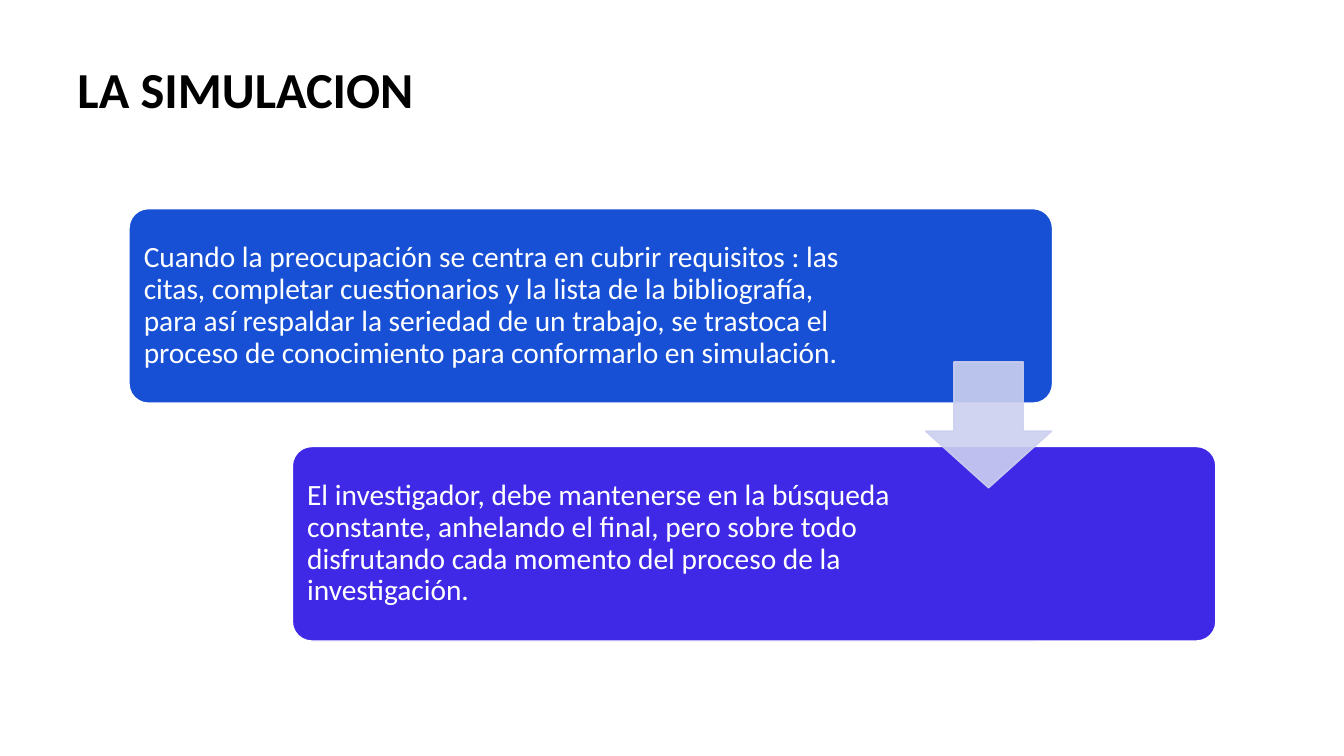
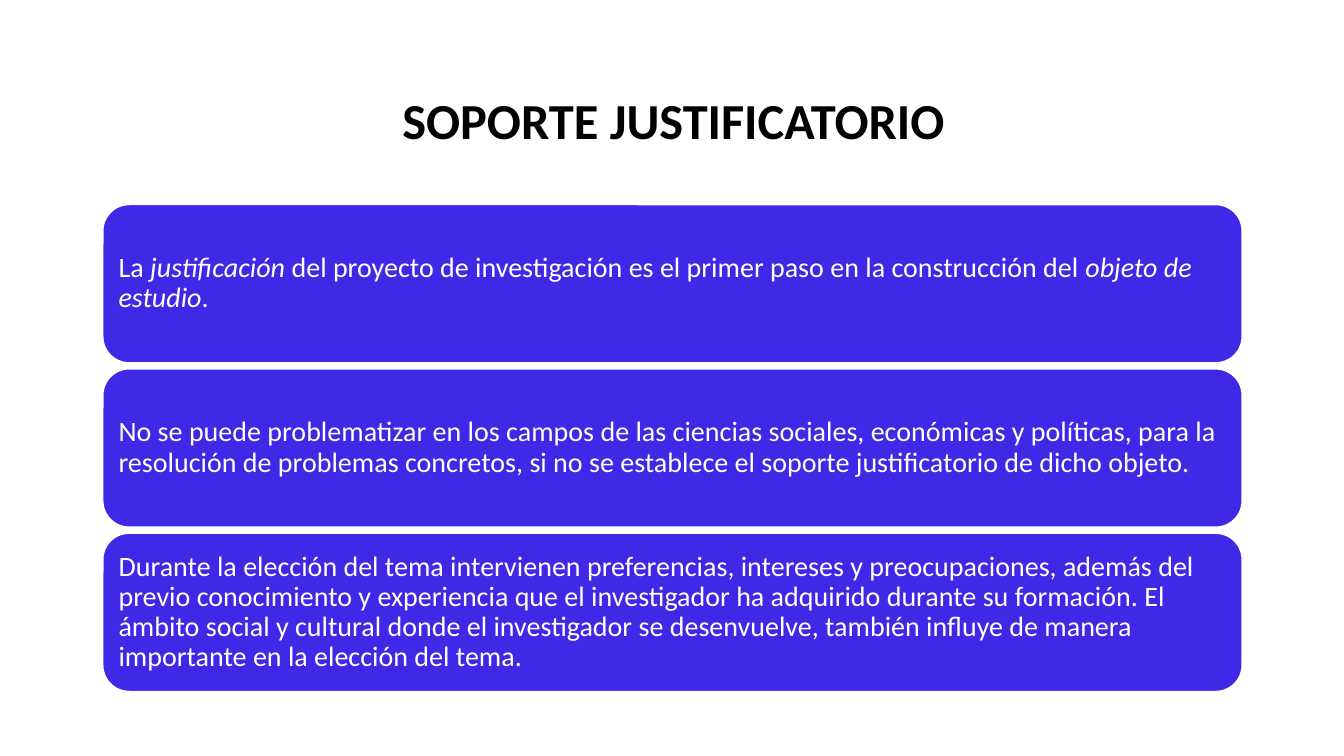
from dataclasses import dataclass

from lxml.etree import SubElement
from pptx import Presentation
from pptx.dml.color import RGBColor
from pptx.enum.shapes import MSO_SHAPE
from pptx.enum.text import MSO_ANCHOR, PP_ALIGN
from pptx.oxml.ns import qn
from pptx.util import Inches, Pt


@dataclass(frozen=True)
class Theme:
    font: str = "Calibri"
    black: RGBColor = RGBColor.from_string("000000")
    white: RGBColor = RGBColor.from_string("FFFFFF")
    blue: RGBColor = RGBColor.from_string("1750D5")
    violet: RGBColor = RGBColor.from_string("3F29E7")
    lavender: RGBColor = RGBColor.from_string("CCD0EF")
    title_size: int = 36
    step_size: int = 21
    card_size: int = 20
    line_spacing: float = 0.9


theme = Theme()


def write(frame, spans, size, color, anchor, align=PP_ALIGN.LEFT, bold=False):
    frame.word_wrap = True
    frame.vertical_anchor = anchor
    para = frame.paragraphs[0]
    para.alignment = align
    para.line_spacing = theme.line_spacing
    for text, italic in spans:
        span = para.add_run()
        span.text = text
        span.font.name = theme.font
        span.font.size = Pt(size)
        span.font.color.rgb = color
        span.font.bold = bold
        span.font.italic = italic


def add_block(page, preset, left, top, width, height, fill, line):
    block = page.shapes.add_shape(
        preset, Inches(left), Inches(top), Inches(width), Inches(height))
    block.shadow.inherit = False
    block.fill.solid()
    block.fill.fore_color.rgb = fill
    block.line.color.rgb = line
    block.line.width = Pt(1)
    return block


deck = Presentation()
deck.slide_width = Inches(13.33)
deck.slide_height = Inches(7.5)

titles = [
    ("LA SIMULACION", 0.67, 11.65, MSO_ANCHOR.TOP, PP_ALIGN.LEFT),
    ("SOPORTE JUSTIFICATORIO", 1.67, 10.02, MSO_ANCHOR.MIDDLE, PP_ALIGN.CENTER),
]
pages = []
for title, left, width, anchor, align in titles:
    page = deck.slides.add_slide(deck.slide_layouts[6])
    box = page.shapes.add_textbox(Inches(left), Inches(0.6), Inches(width), Inches(1.24))
    write(box.text_frame, [(title, False)], theme.title_size, theme.black, anchor, align, True)
    pages.append(page)
simulation_page, support_page = pages

steps = [
    ("Cuando la preocupación se centra en cubrir requisitos : las citas, completar "
     "cuestionarios y la lista de la bibliografía, para así respaldar la seriedad de un "
     "trabajo, se trastoca el proceso de conocimiento para conformarlo en simulación.",
     theme.blue),
    ("El investigador, debe mantenerse en la búsqueda constante, anhelando el final, pero "
     "sobre todo disfrutando cada momento del proceso de la investigación.",
     theme.violet),
]
for index, (text, fill) in enumerate(steps):
    step = add_block(simulation_page, MSO_SHAPE.ROUNDED_RECTANGLE,
                     1.28 + index * 1.62, 2.07 + index * 2.36, 9.16, 1.93, fill, theme.white)
    step.adjustments[0] = 0.1
    frame = step.text_frame
    frame.margin_left = frame.margin_top = frame.margin_bottom = Inches(0.09)
    frame.margin_right = Inches(1.97 + index)
    write(frame, [(text, False)], theme.step_size, theme.white, MSO_ANCHOR.MIDDLE)

arrow = add_block(simulation_page, MSO_SHAPE.DOWN_ARROW, 9.18, 3.59, 1.25, 1.25,
                  theme.lavender, theme.lavender)
arrow.adjustments[0] = 0.55
arrow.adjustments[1] = 0.45
for color in arrow._element.spPr.iter(qn("a:srgbClr")):
    SubElement(color, qn("a:alpha")).set("val", "90000")

cards = [
    [("La ", False), ("justificación ", True),
     ("del proyecto de investigación es el primer paso en la construcción del ", False),
     ("objeto de estudio", True), (".", False)],
    [("No se puede problematizar en los campos de las ciencias sociales, económicas y "
      "políticas, para la resolución de problemas concretos, si no se establece el soporte "
      "justificatorio de dicho objeto.", False)],
    [("Durante la elección del tema intervienen preferencias, intereses y preocupaciones, "
      "además del previo conocimiento y experiencia que el investigador ha adquirido durante "
      "su formación. El ámbito social y cultural donde el investigador se desenvuelve, también "
      "influye de manera importante en la elección del tema.", False)],
]
for index, spans in enumerate(cards):
    card = add_block(support_page, MSO_SHAPE.ROUNDED_RECTANGLE,
                     1.02, 2.03 + index * 1.63, 11.3, 1.57, theme.violet, theme.white)
    frame = card.text_frame
    frame.margin_left = frame.margin_right = Inches(0.08)
    frame.margin_top = frame.margin_bottom = Inches(0.08)
    write(frame, spans, theme.card_size, theme.white, MSO_ANCHOR.MIDDLE)

deck.save("out.pptx")
